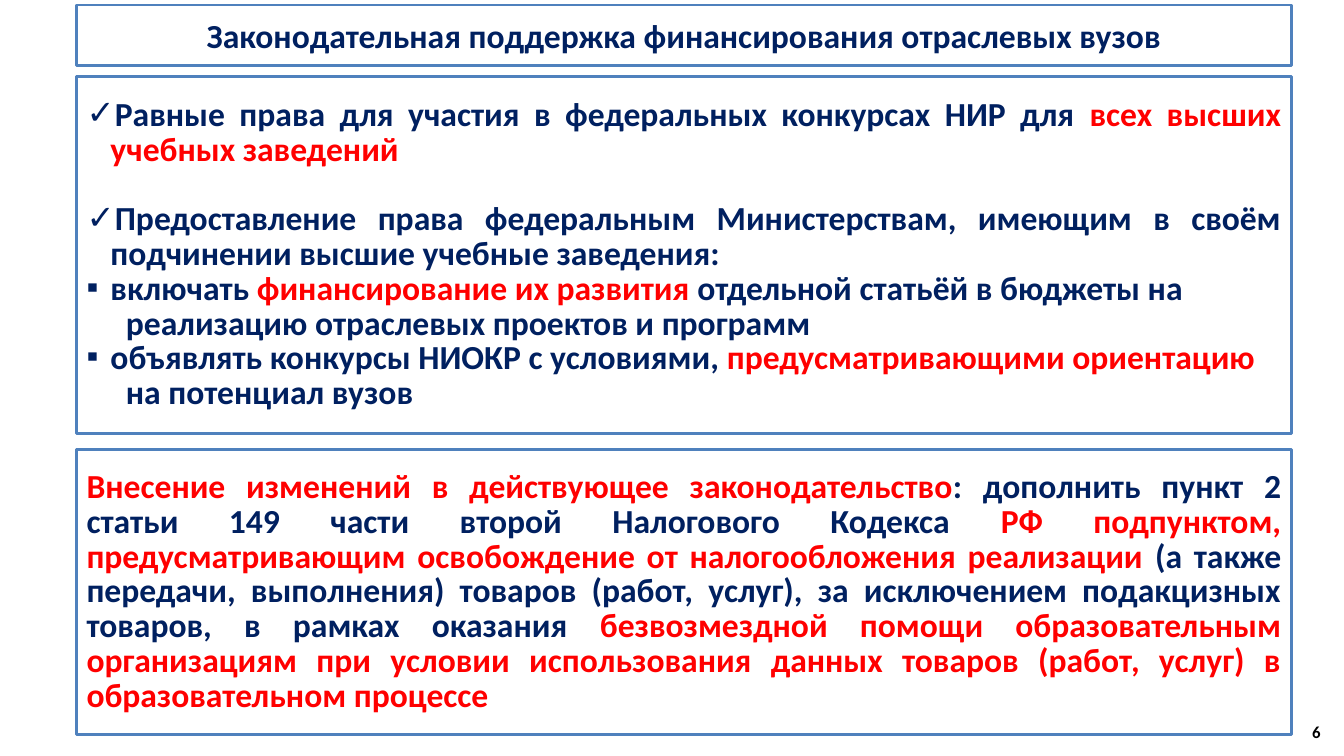
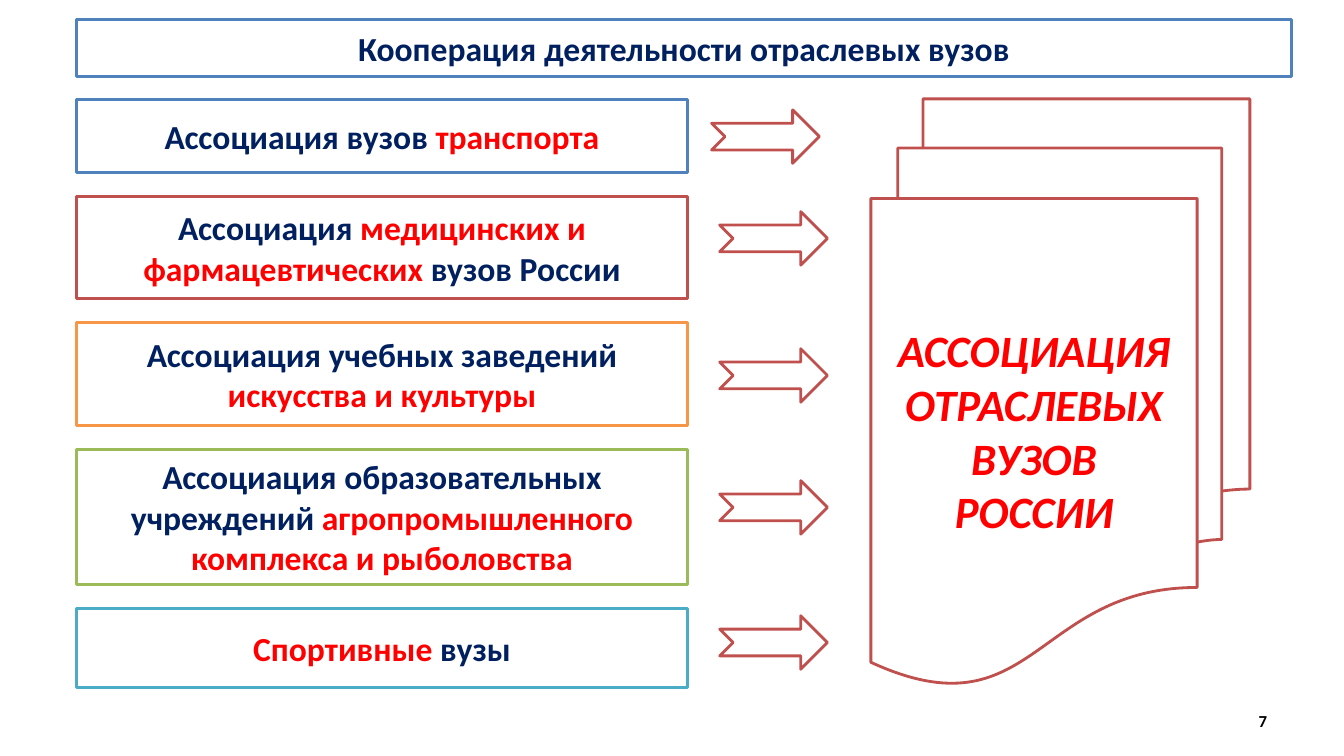
from pptx import Presentation
from pptx.dml.color import RGBColor
from pptx.enum.shapes import MSO_SHAPE as SHAPE
from pptx.enum.text import MSO_ANCHOR as ANCHOR, MSO_AUTO_SIZE as AUTO, PP_ALIGN as ALIGN
from pptx.oxml.ns import qn
from pptx.util import Pt
from lxml.etree import SubElement

WHITE = RGBColor(0xFF, 0xFF, 0xFF)
BLACK = RGBColor(0x00, 0x00, 0x00)
NAVY = RGBColor(0x00, 0x20, 0x60)
RED = RGBColor(0xFF, 0x00, 0x00)
BLUE = RGBColor(0x4F, 0x81, 0xBD)
BRICK = RGBColor(0xC0, 0x50, 0x4D)
ORANGE = RGBColor(0xF7, 0x96, 0x46)
GREEN = RGBColor(0x9B, 0xBB, 0x59)
TEAL = RGBColor(0x4B, 0xAC, 0xC6)

LEFT, WIDTH = 54.7, 867.6
LEADING = Pt(24.8)
HANG, DEEP = 17, 28
GAP = 17
ARROW_W, ARROW_H = 77, 38.2
BODY_FONT = dict(name="Calibri", size=Pt(24), bold=True)
NUMBER_FONT = dict(name="Calibri", size=Pt(12), bold=True)
UNION_FONT = dict(name="Calibri", size=Pt(32), bold=True, italic=True)

SUPPORT = [
    ("✓", HANG, LEADING, [
        ("Равные права для участия в федеральных конкурсах НИР для ", NAVY),
        ("всех высших учебных заведений", RED)]),
    ("✓", HANG, 0, [
        ("Предоставление права федеральным Министерствам, имеющим в своём "
         "подчинении высшие учебные заведения:", NAVY)]),
    ("▪", HANG, 0, [
        ("включать ", NAVY), ("финансирование их развития ", RED),
        ("отдельной статьёй в бюджеты на", NAVY)]),
    (None, DEEP, 0, [("реализацию отраслевых проектов и программ", NAVY)]),
    ("▪", HANG, 0, [
        ("объявлять конкурсы НИОКР с условиями, ", NAVY),
        ("предусматривающими ориентацию", RED)]),
    (None, DEEP, 0, [("на потенциал вузов", NAVY)]),
]

AMENDMENT = [
    ("Внесение изменений в действующее законодательство", RED),
    (": дополнить пункт 2 статьи 149 части второй Налогового Кодекса ", NAVY),
    ("РФ подпунктом, предусматривающим освобождение от налогообложения "
     "реализации ", RED),
    ("(а также передачи, выполнения) товаров (работ, услуг), за исключением "
     "подакцизных товаров, в рамках оказания ", NAVY),
    ("безвозмездной помощи образовательным организациям при условии "
     "использования данных товаров (работ, услуг) в образовательном процессе", RED),
]

ASSOCIATIONS = [
    (51.8, BLUE, 508.3, 0.4, [("Ассоциация вузов ", NAVY), ("транспорта", RED)]),
    (73.4, BRICK, 514.1, -6.5, [
        ("Ассоциация ", NAVY), ("медицинских и фармацевтических", RED),
        (" вузов России", NAVY)]),
    (73.4, ORANGE, 514.1, 1, [
        ("Ассоциация учебных заведений ", NAVY), ("искусства и культуры", RED)]),
    (96.5, GREEN, 514.1, -6.7, [
        ("Ассоциация образовательных учреждений ", NAVY),
        ("агропромышленного комплекса и рыболовства", RED)]),
    (56.9, TEAL, 514.1, -3.9, [("Спортивные", RED), (" вузы", NAVY)]),
]

UNION = ["АССОЦИАЦИЯ", "ОТРАСЛЕВЫХ", "ВУЗОВ", "РОССИИ"]


def set_all(obj, values):
    for key, value in values.items():
        setattr(obj, key, value)


def outline(sp, color):
    sp.shadow.inherit = False
    sp.fill.solid()
    sp.fill.fore_color.rgb = WHITE
    sp.line.color.rgb = color
    sp.line.width = Pt(2)


def place(sp, box):
    set_all(sp, dict(zip(("left", "top", "width", "height"), map(Pt, box))))


def prepare(sp):
    tf = sp.text_frame
    set_all(tf, dict(word_wrap=True, auto_size=AUTO.NONE, vertical_anchor=ANCHOR.MIDDLE))
    return tf


def add_runs(p, runs, font=BODY_FONT):
    for text, color in runs:
        r = p.add_run()
        r.text = text
        set_all(r.font, font)
        r.font.color.rgb = color


def add_box(s, kind, box, color):
    sp = s.shapes.add_shape(kind, *map(Pt, box))
    outline(sp, color)
    return sp


def add_panel(s, box, color, runs, **fmt):
    p = prepare(add_box(s, SHAPE.RECTANGLE, box, color)).paragraphs[0]
    set_all(p, fmt)
    add_runs(p, runs)


def add_title(s, top, height, text):
    sp = s.shapes.title
    place(sp, (LEFT, top, WIDTH, height))
    outline(sp, BLUE)
    tf = prepare(sp)
    set_all(tf, dict(margin_left=Pt(4.3), margin_right=Pt(4.3),
                     margin_top=Pt(2.2), margin_bottom=Pt(2.2)))
    p = tf.paragraphs[0]
    p.alignment = ALIGN.CENTER
    add_runs(p, [(text, NAVY)])


def add_number(s, left, top, number):
    sp = s.shapes.add_textbox(*map(Pt, (left, top, 223.9, 28.8)))
    p = prepare(sp).paragraphs[0]
    p.alignment = ALIGN.RIGHT
    add_runs(p, [(str(number), BLACK)], NUMBER_FONT)


def set_bullet(p, mark, margin):
    pPr = p._p.get_or_add_pPr()
    pPr.set("marL", str(Pt(margin)))
    pPr.set("indent", str(Pt(-margin if mark else 0)))
    if mark:
        SubElement(pPr, qn("a:buFont"), typeface="Arial")
        SubElement(pPr, qn("a:buChar"), char=mark)
    else:
        SubElement(pPr, qn("a:buNone"))


def add_list(s, box, items):
    sp = s.placeholders[1]
    place(sp, box)
    outline(sp, BLUE)
    tf = prepare(sp)
    for i, (mark, margin, after, runs) in enumerate(items):
        p = tf.add_paragraph() if i else tf.paragraphs[0]
        set_all(p, dict(alignment=ALIGN.JUSTIFY, line_spacing=LEADING,
                        space_before=Pt(0), space_after=Pt(0) + after))
        set_bullet(p, mark, margin)
        add_runs(p, runs)


def add_associations(s, left, top, width):
    for height, color, arrow_left, shift, runs in ASSOCIATIONS:
        add_panel(s, (left, top, width, height), color, runs, alignment=ALIGN.CENTER)
        arrow_top = top + (height - ARROW_H) / 2 + shift
        add_box(s, SHAPE.NOTCHED_RIGHT_ARROW,
                (arrow_left, arrow_top, ARROW_W, ARROW_H), BRICK)
        top += height + GAP


def add_union(s, box):
    tf = prepare(add_box(s, SHAPE.FLOWCHART_MULTIDOCUMENT, box, BRICK))
    for i, line in enumerate(UNION):
        p = tf.add_paragraph() if i else tf.paragraphs[0]
        p.alignment = ALIGN.CENTER
        add_runs(p, [(line, RED)], UNION_FONT)


def support_slide(prs):
    s = prs.slides.add_slide(prs.slide_layouts[1])
    add_title(s, 3.6, 43.2, "Законодательная поддержка финансирования отраслевых вузов")
    add_list(s, (LEFT, 54.7, WIDTH, 254.9), SUPPORT)
    add_panel(s, (LEFT, 321.1, WIDTH, 203.8), BLUE, AMENDMENT,
              alignment=ALIGN.JUSTIFY, line_spacing=LEADING)
    add_number(s, 726.5, 508.3, 6)


def cooperation_slide(prs):
    s = prs.slides.add_slide(prs.slide_layouts[5])
    add_title(s, 13.7, 41, "Кооперация деятельности отраслевых вузов")
    add_associations(s, LEFT, 71.3, 436.3)
    add_union(s, (622.1, 70.6, 270.7, 418.3))
    add_number(s, 688.3, 500.4, 7)


def main():
    prs = Presentation()
    set_all(prs, dict(slide_width=Pt(960), slide_height=Pt(540)))
    support_slide(prs)
    cooperation_slide(prs)
    prs.save("out.pptx")


if __name__ == "__main__":
    main()
